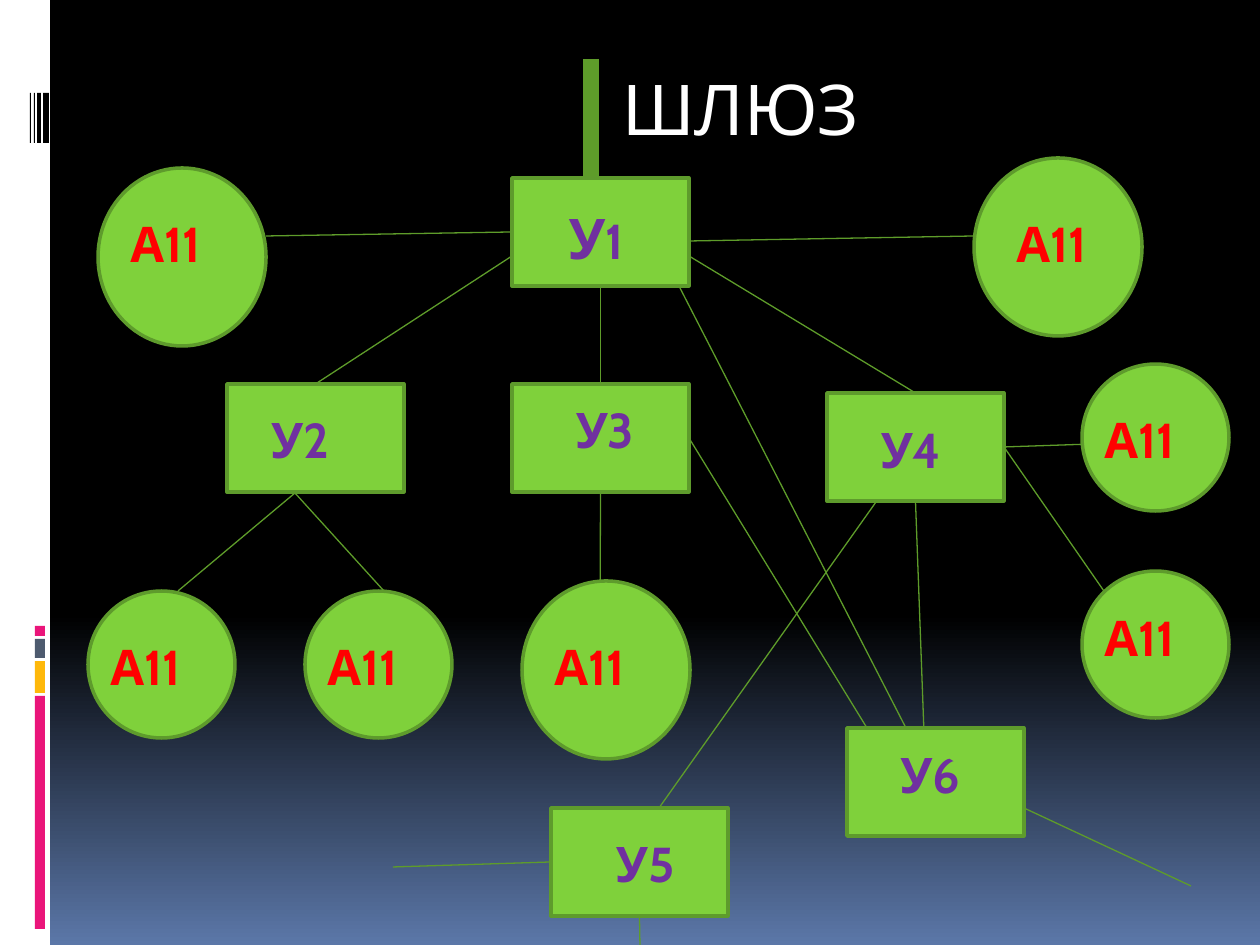
from dataclasses import dataclass

from lxml import etree
from pptx import Presentation
from pptx import util as u
from pptx.dml.color import RGBColor
from pptx.enum import shapes, text
from pptx.oxml import ns

PX = 914400 / 126


@dataclass(frozen=True)
class Theme:
    font: str = "Cabin"
    title_size: int = 40
    first_size: int = 32
    label_size: int = 28
    white: str = "FFFFFF"
    black: str = "000000"
    sky: str = "5B77A8"
    node: str = "7FD13B"
    border: str = "5E9B2C"
    link: str = "5E9C2A"
    router: str = "7030A0"
    host: str = "FF0000"
    pink: str = "EA157A"
    amber: str = "FEB80A"
    slate: str = "4E5B6F"


THEME = Theme()
TOP, LEFT, BOTTOM, RIGHT = range(4)

# Sidebar: left, top, width, height, colour
SIDEBAR = [
    (0, 0, 50, 945, THEME.white),
    (35, 696, 10, 233, THEME.pink),
    (35, 661, 10, 32, THEME.amber),
    (35, 639, 10, 19, THEME.slate),
    (35, 626, 10, 10, THEME.pink),
] + [(x, 93, width, 50, THEME.black)
     for x, width in [(43, 6), (37, 4), (34, 1), (30, 1)]]

# Routers: name, left and top of the box, left and top of the label
ROUTER_SIZE = (177, 108)
ROUTERS = [
    ("У1", (512, 178), (542, 197)),
    ("У2", (227, 384), (246, 403)),
    ("У3", (512, 384), (551, 393)),
    ("У4", (827, 393), (857, 413)),
    ("У5", (551, 808), (591, 827)),
    ("У6", (847, 728), (876, 738)),
]

# Hosts: size, left and top of the circle, left and top of the label
LARGE, SMALL = (168, 178), (147, 147)
HOST_NAME = "А11"
HOSTS = [
    (LARGE, (974, 158), (1004, 207)),
    (LARGE, (98, 168), (118, 207)),
    (LARGE, (522, 581), (542, 630)),
    (SMALL, (88, 591), (98, 630)),
    (SMALL, (305, 591), (315, 630)),
    (SMALL, (1082, 364), (1092, 403)),
    (SMALL, (1082, 571), (1092, 601)),
]

# Links: each end is a point or a (router, side) pair
LINKS = [
    (("У1", BOTTOM), ("У3", TOP)),
    ((689, 241), (974, 236)),
    (("У1", LEFT), (266, 236)),
    (("У3", BOTTOM), (600, 660)),
    ((512, 256), ("У2", TOP)),
    ((689, 256), ("У4", TOP)),
    ((295, 493), (178, 591)),
    ((295, 493), (384, 591)),
    (("У4", RIGHT), (1092, 444)),
    (("У4", RIGHT), (1131, 630)),
    (("У4", BOTTOM), (925, 759)),
    ((876, 502), (659, 808)),
    (("У5", LEFT), (393, 867)),
    (("У5", BOTTOM), (640, 945)),
    ((1024, 808), (1191, 886)),
    ((679, 286), (906, 728)),
    (("У3", RIGHT), (867, 728)),
]
GATEWAY_LINE = ((591, 59), (591, 178))


def emu(*lengths):
    return [round(length * PX) for length in lengths]


def color(value):
    return RGBColor.from_string(value)


def add_block(slide, kind, box, fill, border=None):
    shape = slide.shapes.add_shape(kind, *emu(*box))
    shape.shadow.inherit = False
    shape.fill.solid()
    shape.fill.fore_color.rgb = color(fill)
    if border:
        shape.line.color.rgb = color(border)
        shape.line.width = u.Pt(2)
    else:
        shape.line.fill.background()
    return shape


def add_text(slide, runs, box, *, fill, bold=True, align=text.PP_ALIGN.LEFT):
    """Add a text box; runs are (words, size) pairs."""
    frame = slide.shapes.add_textbox(*emu(*box)).text_frame
    frame.word_wrap = True
    frame.auto_size = text.MSO_AUTO_SIZE.SHAPE_TO_FIT_TEXT
    paragraph = frame.paragraphs[0]
    paragraph.alignment = align
    for words, size in runs:
        run = paragraph.add_run()
        run.text = words
        run.font.name = THEME.font
        run.font.size = u.Pt(size)
        run.font.bold = bold
        run.font.color.rgb = color(fill)


def add_link(slide, ends, routers, width=0.75):
    points = [(0, 0) if end[0] in routers else end for end in ends]
    link = slide.shapes.add_connector(
        shapes.MSO_CONNECTOR.STRAIGHT, *emu(*points[0], *points[1]))
    for end, connect in zip(ends, (link.begin_connect, link.end_connect)):
        if end[0] in routers:
            connect(routers[end[0]], end[1])
    link.line.color.rgb = color(THEME.link)
    link.line.width = u.Pt(width)
    etree.SubElement(link._element.spPr, ns.qn("a:effectLst"))
    # Links run behind the nodes
    routers["У1"]._element.addprevious(link._element)


def main():
    presentation = Presentation()
    presentation.slide_width, presentation.slide_height = emu(1260, 945)
    slide = presentation.slides.add_slide(presentation.slide_layouts[6])

    # Background
    fill = slide.background.fill
    fill.gradient()
    fill.gradient_angle = 270
    for stop, position, value in zip(
            fill.gradient_stops, (0.65, 1), (THEME.black, THEME.sky)):
        stop.position = position
        stop.color.rgb = color(value)

    # Sidebar
    for *box, value in SIDEBAR:
        add_block(slide, shapes.MSO_SHAPE.RECTANGLE, box, value)

    # Nodes
    routers = {
        name: add_block(slide, shapes.MSO_SHAPE.RECTANGLE, corner + ROUTER_SIZE,
                        THEME.node, THEME.border)
        for name, corner, _ in ROUTERS
    }
    for size, corner, _ in HOSTS:
        add_block(slide, shapes.MSO_SHAPE.OVAL, corner + size,
                  THEME.node, THEME.border)

    # Links
    add_link(slide, GATEWAY_LINE, routers, width=9.5)
    for ends in LINKS:
        add_link(slide, ends, routers)

    # Labels
    for name, _, corner in ROUTERS:
        first = name == "У1"
        runs = [(name, THEME.label_size)]
        if first:
            runs = [(name[0], THEME.first_size), (name[1], THEME.label_size)]
        add_text(slide, runs, (*corner, 108, 81 if first else 72),
                 fill=THEME.router, align=text.PP_ALIGN.CENTER)
    for _, _, corner in HOSTS:
        add_text(slide, [(HOST_NAME, THEME.label_size)], (*corner, 129, 72),
                 fill=THEME.host)
    add_text(slide, [("ШЛЮЗ", THEME.title_size)], (610, 59, 335, 97),
             fill=THEME.white, bold=False)

    presentation.save("out.pptx")


if __name__ == "__main__":
    main()
